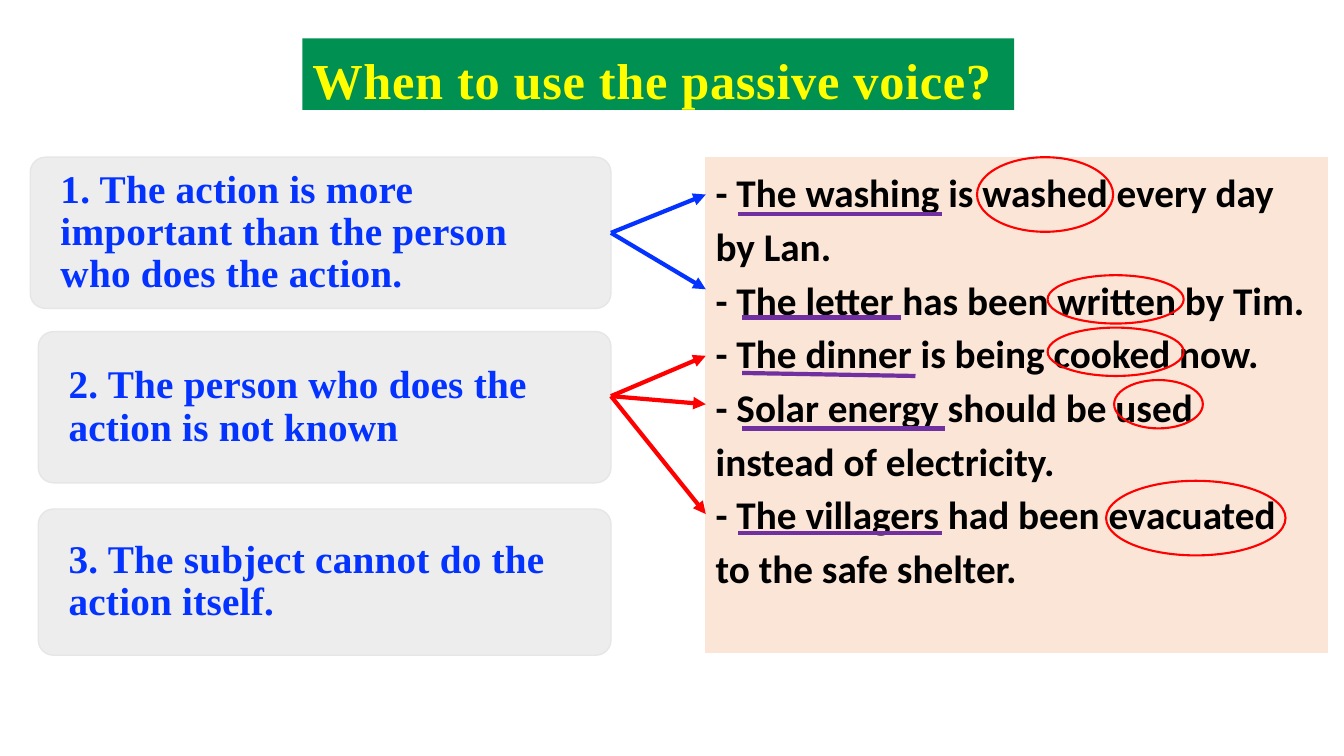
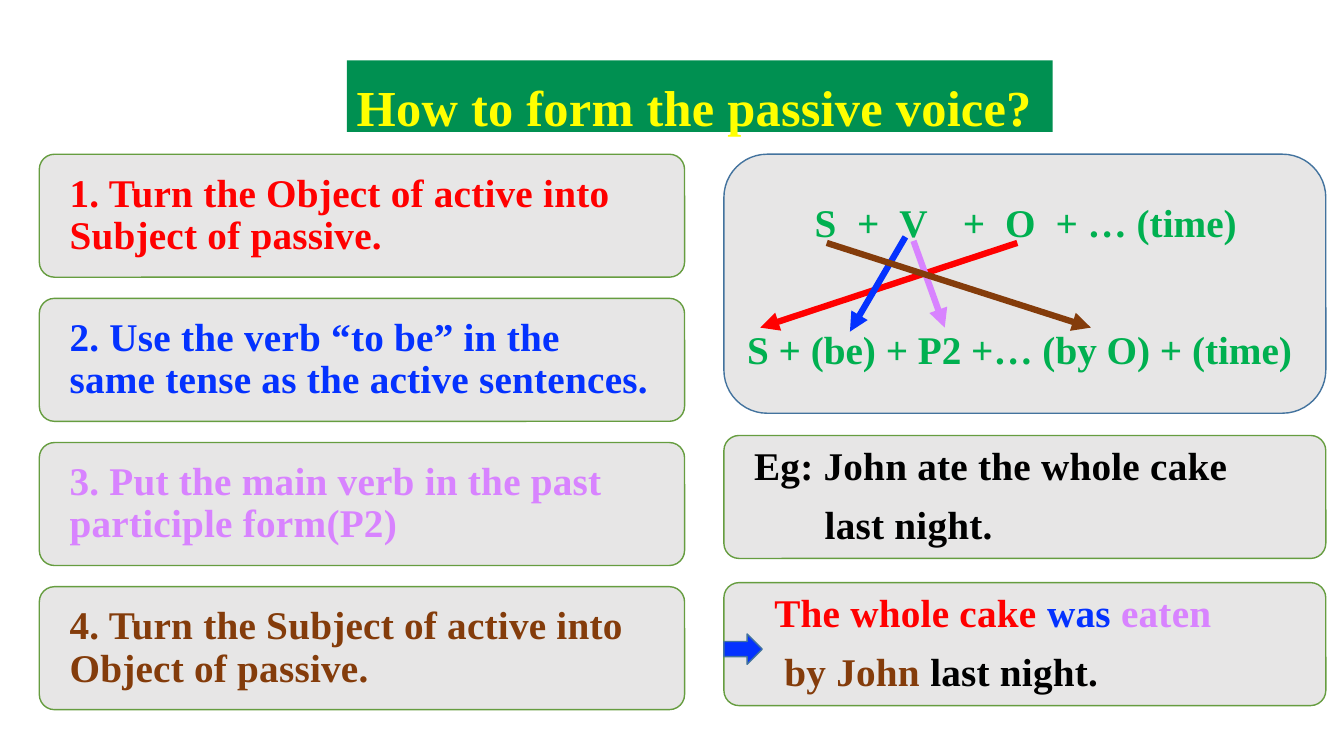
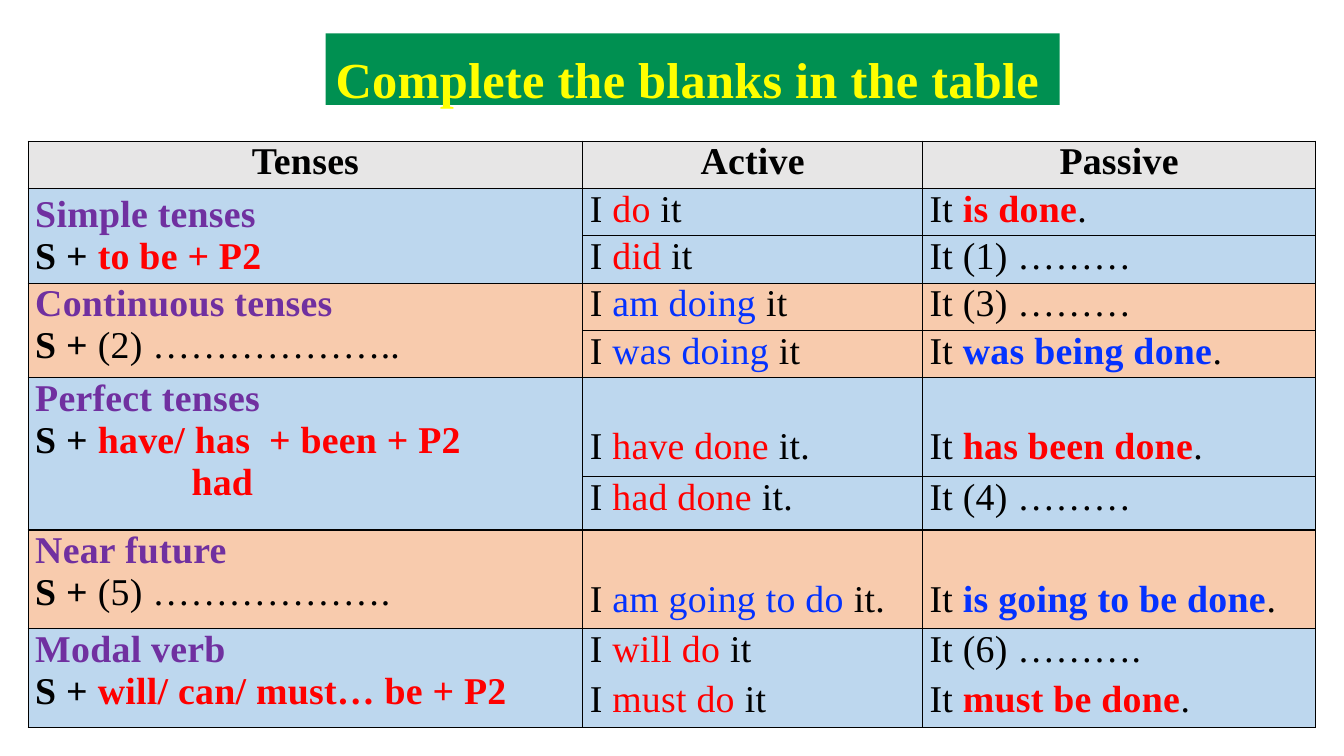
from dataclasses import dataclass
from lxml.etree import SubElement
from pptx import Presentation
from pptx.dml.color import RGBColor
from pptx.enum.shapes import MSO_CONNECTOR as Link, MSO_SHAPE as Geo
from pptx.enum.text import MSO_ANCHOR as Anchor, PP_ALIGN as Align
from pptx.oxml.ns import qn
from pptx.util import Inches, Pt

SERIF, SANS = "Times New Roman", "Calibri"
BLACK, RED, BLUE = "000000", "FF0000", "0432FF"
PINK, BROWN, PURPLE = "D883FF", "843C0B", "7030A0"
GREEN, YELLOW, LEAF = "009051", "FFFF00", "00B050"
GREY, PALE, CREAM = "E7E6E6", "EDEDED", "FBE5D6"
SKY, PEACH = "BDD7EE", "F8CBAD"
MOSS, STEEL = "669D40", "43739E"


@dataclass
class Para:
    """Runs as (text, colour, bold); indent and tab stops in inches."""
    runs: list
    indent: float = 0
    tabs: tuple = ()


def rgb(code):
    return RGBColor.from_string(code)


def bold(text, hue=BLACK, **more):
    return Para([(text, hue, True)], **more)


def write(frame, paras, size=28, face=SERIF, gap=0, line=None, track=0, align=Align.LEFT):
    """Fill a text frame; gap is the space between paragraphs in points."""
    frame.word_wrap = True
    for i, para in enumerate(paras):
        p = frame.paragraphs[0] if i == 0 else frame.add_paragraph()
        props = p._p.get_or_add_pPr()
        if para.indent:
            props.set("marL", str(Inches(para.indent)))
            props.set("indent", "0")
        if para.tabs:
            stops = SubElement(props, qn("a:tabLst"))
            for pos in para.tabs:
                SubElement(stops, qn("a:tab"), pos=str(Inches(pos)), algn="l")
        p.alignment = align
        if line:
            p.line_spacing = line
        if gap and i < len(paras) - 1:
            p.space_after = Pt(gap)
        for text, hue, strong in para.runs:
            run = p.add_run()
            run.text = text
            font = run.font
            font.name, font.size, font.bold = face, Pt(size), strong
            font.color.rgb = rgb(hue)
            if track:
                run._r.get_or_add_rPr().set("spc", str(int(track * 100)))


def inset(frame, left, top, right, bottom):
    frame.margin_left, frame.margin_top = Inches(left), Inches(top)
    frame.margin_right, frame.margin_bottom = Inches(right), Inches(bottom)


def shape(slide, geo, box, fill=None, edge=None, width=1):
    item = slide.shapes.add_shape(geo, *map(Inches, box))
    item.shadow.inherit = False
    if fill:
        item.fill.solid()
        item.fill.fore_color.rgb = rgb(fill)
    else:
        item.fill.background()
    if edge:
        item.line.color.rgb = rgb(edge)
        item.line.width = Pt(width)
    else:
        item.line.fill.background()
    return item


def stroke(slide, start, end, hue, width=3, arrow=True):
    item = slide.shapes.add_connector(Link.STRAIGHT, *map(Inches, (*start, *end)))
    item.line.color.rgb = rgb(hue)
    item.line.width = Pt(width)
    if arrow:
        SubElement(item.line._get_or_add_ln(), qn("a:tailEnd"), type="triangle")
    SubElement(item._element.spPr, qn("a:effectLst"))


def title(slide, box, text, track=0.2, line=1.07):
    frame = shape(slide, Geo.RECTANGLE, box, GREEN).text_frame
    inset(frame, 0.1, 0.11, 0, 0)
    frame.vertical_anchor = Anchor.TOP
    write(frame, [bold(text, YELLOW)], 36, track=track, line=line)


def card(slide, box, paras, fill=GREY, edge=MOSS, radius=0.15, pad=0.3,
         line=0.9, gap=12, track=0.2):
    """Rounded box whose text starts at pad from its left edge."""
    item = shape(slide, Geo.ROUNDED_RECTANGLE, box, fill, edge)
    item.adjustments[0] = radius / min(box[2:])
    side = pad - 0.29 * radius
    frame = item.text_frame
    inset(frame, side, 0, side, 0)
    frame.vertical_anchor = Anchor.MIDDLE
    write(frame, paras, line=line, gap=gap, track=track)


def samples(slide, box):
    """Example sentences with underlined subjects and ringed participles."""
    x, y = box[:2]
    frame = shape(slide, Geo.RECTANGLE, box, CREAM, CREAM, 0.75).text_frame
    frame.vertical_anchor = Anchor.TOP
    write(frame, [bold("- " + text) for text in (
        "The washing is washed every day by Lan.",
        "The letter has been written by Tim.",
        "The dinner is being cooked now.",
        "Solar energy should be used instead of electricity.",
        "The villagers had been evacuated to the safe shelter.")],
        face=SANS, line=1.14)
    for left, right, top, drop in (
            (0.32, 2.34, 0.56, 0), (0.36, 1.94, 1.59, 0), (0.36, 2.08, 2.14, 0.03),
            (0.36, 2.37, 2.69, 0), (0.32, 2.34, 3.73, 0)):
        stroke(slide, (x + left, y + top), (x + right, y + top + drop), PURPLE, arrow=False)
    for left, top, wide, high in (
            (2.69, 0, 1.35, 0.74), (3.39, 1.17, 1.35, 0.48), (3.39, 1.69, 1.35, 0.48),
            (4.05, 2.21, 0.88, 0.48), (3.97, 3.21, 1.78, 0.74)):
        shape(slide, Geo.OVAL, (x + left, y + top, wide, high), edge=RED, width=1.5)


def uses(slide):
    title(slide, (3, 0.38, 7.06, 0.71), "When to use the passive voice?", 0.5, None)
    for left, top, high, text in (
            (0.3, 1.56, 1.5, "1. The action is more important than the person who does the action."),
            (0.38, 3.29, 1.5, "2. The person who does the action is not known"),
            (0.38, 5.05, 1.45, "3. The subject cannot do the action itself.")):
        card(slide, (left, top, 6.06 - left, high), [bold(text, BLUE)], PALE, GREY)
    samples(slide, (7, 1.56, 6.17, 4.91))
    for start, hue, ends in ((2.31, BLUE, (1.93, 2.87)), (3.93, RED, (3.53, 4.01, 5.1))):
        for end in ends:
            stroke(slide, (6.06, start), (7, end), hue)


def scheme(slide, box):
    """Active pattern above, passive below, arrows between their parts."""
    x, y = box[:2]
    card(slide, box, [
        bold("\tS\t+\tV\t+\tO\t+ … (time)", LEAF, tabs=(0.67, 1.09, 1.51, 2.14, 2.56, 3.06)),
        bold("S + (be) + P2 +… (by O) + (time)", LEAF)],
        edge=STEEL, radius=0.43, pad=0.23, line=1.07, gap=55, track=0)
    for x1, y1, x2, y2, hue in (
            (2.91, 0.88, 0.36, 1.72, RED), (1.8, 0.82, 1.25, 1.76, BLUE),
            (1.88, 0.86, 2.19, 1.72, PINK), (1.02, 0.88, 3.64, 1.72, BROWN)):
        stroke(slide, (x + x1, y + y1), (x + x2, y + y2), hue, 4.5)


def forming(slide):
    title(slide, (3.44, 0.6, 7, 0.71), "How to form the passive voice?")
    steps = (("1. Turn the Object of active into Subject of passive.", RED),
             ("2. Use the verb “to be” in the same tense as the active sentences.", BLUE),
             ("3. Put the main verb in the past participle form(P2)", PINK),
             ("4. Turn the Subject of active into Object of passive.", BROWN))
    for i, (text, hue) in enumerate(steps):
        card(slide, (0.39, 1.53 + i * 1.43, 6.4, 1.22), [bold(text, hue)])
    left, wide = 7.18, 5.97
    scheme(slide, (left, 1.53, wide, 2.57))
    card(slide, (left, 4.32, wide, 1.22),
         [bold("Eg: John ate the whole cake"), bold("last night.", indent=0.7)])
    card(slide, (left, 5.78, wide, 1.22), [
        Para([("The whole cake ", RED, True), ("was ", BLUE, True), ("eaten", PINK, True)], 0.2),
        Para([("by John ", BROWN, True), ("last night.", BLACK, True)], 0.3)])
    shape(slide, Geo.RIGHT_ARROW, (left, 6.29, 0.38, 0.3), BLUE, STEEL)


def fill(cell, paras, hue, top=0, gap=0, align=Align.LEFT):
    props = cell._tc.get_or_add_tcPr()
    for side in ("lnL", "lnR", "lnT", "lnB"):
        edge = SubElement(props, qn("a:" + side), w=str(Pt(1)))
        SubElement(SubElement(edge, qn("a:solidFill")), qn("a:srgbClr"), val=BLACK)
    cell.fill.solid()
    cell.fill.fore_color.rgb = rgb(hue)
    inset(cell, 0.07, top, 0.07, 0)
    write(cell.text_frame, paras, 27, gap=gap, track=0.2, align=align)


def active(verb, end, hue):
    return Para([("I ", BLACK, False), (verb, hue, False), (" " + end, BLACK, False)])


def passive(verb, hue):
    """A numbered blank stays plain; a given answer is bold and coloured."""
    if verb.startswith("("):
        return Para([("It " + verb, BLACK, False)])
    return Para([("It ", BLACK, False), (verb, hue, True), (".", BLACK, False)])


def rule(text):
    blank = text.startswith("(")
    tabs = (2.32,) if "\t" in text else ()
    return Para([("S + ", BLACK, True), (text, BLACK if blank else RED, not blank)], tabs=tabs)


# Name, rule, extra lines, then table rows of (active verb, ending, passive verb).
TENSES = (
    ("Simple tenses", "to be + P2", [],
     [[("do", "it", "is done")], [("did", "it", "(1) ………")]]),
    ("Continuous tenses", "(2) ………………..", [],
     [[("am doing", "it", "(3) ………")], [("was doing", "it", "was being done")]]),
    ("Perfect tenses", "have/ has\t+ been + P2", [bold("had", RED, indent=1.55)],
     [[("have done", "it.", "has been done")], [("had done", "it.", "(4) ………")]]),
    ("Near future", "(5) ……………….", [],
     [[("am going to do", "it.", "is going to be done")]]),
    ("Modal verb", "will/ can/ must… be + P2", [],
     [[("will do", "it", "(6) ………."), ("must do", "it", "must be done")]]),
)


def grid(slide, box):
    cols = (5.5, 3.37, 3.9)
    highs = (0.47, 0.47, 0.47, 0.47, 0.47, 0.98, 0.53, 0.98, 0.98)
    table = slide.shapes.add_table(len(highs), len(cols), *map(Inches, box)).table
    table.first_row = table.horz_banding = False
    for col, wide in zip(table.columns, cols):
        col.width = Inches(wide)
    for row, high in zip(table.rows, highs):
        row.height = Inches(high)
    for i, text in enumerate(("Tenses", "Active", "Passive")):
        fill(table.cell(0, i), [bold(text)], GREY, align=Align.CENTER)
    r = 1
    for i, (name, form, extra, rows) in enumerate(TENSES):
        back, hue = ((SKY, RED), (PEACH, BLUE))[i % 2]
        head = table.cell(r, 0)
        fill(head, [bold(name, PURPLE), rule(form), *extra], back)
        if i == 0:
            head.vertical_anchor = Anchor.MIDDLE
        if len(rows) > 1:
            fill(table.cell(r + 1, 0), [], back)
            head.merge(table.cell(r + 1, 0))
        for lines in rows:
            top = 0.48 if highs[r] > 0.9 and len(lines) == 1 else 0
            fill(table.cell(r, 1), [active(a, end, hue) for a, end, _ in lines], back, top, 6)
            fill(table.cell(r, 2), [passive(p, hue) for _, _, p in lines], back, top, 6)
            r += 1


def tenses(slide):
    title(slide, (3.23, 0.33, 7.28, 0.71), "Complete the blanks in the table")
    grid(slide, (0.28, 1.4, 12.77, 5.82))


def main():
    deck = Presentation()
    deck.slide_width, deck.slide_height = Inches(13.33), Inches(7.5)
    for build in (uses, forming, tenses):
        build(deck.slides.add_slide(deck.slide_layouts[6]))
    deck.save("out.pptx")


if __name__ == "__main__":
    main()
